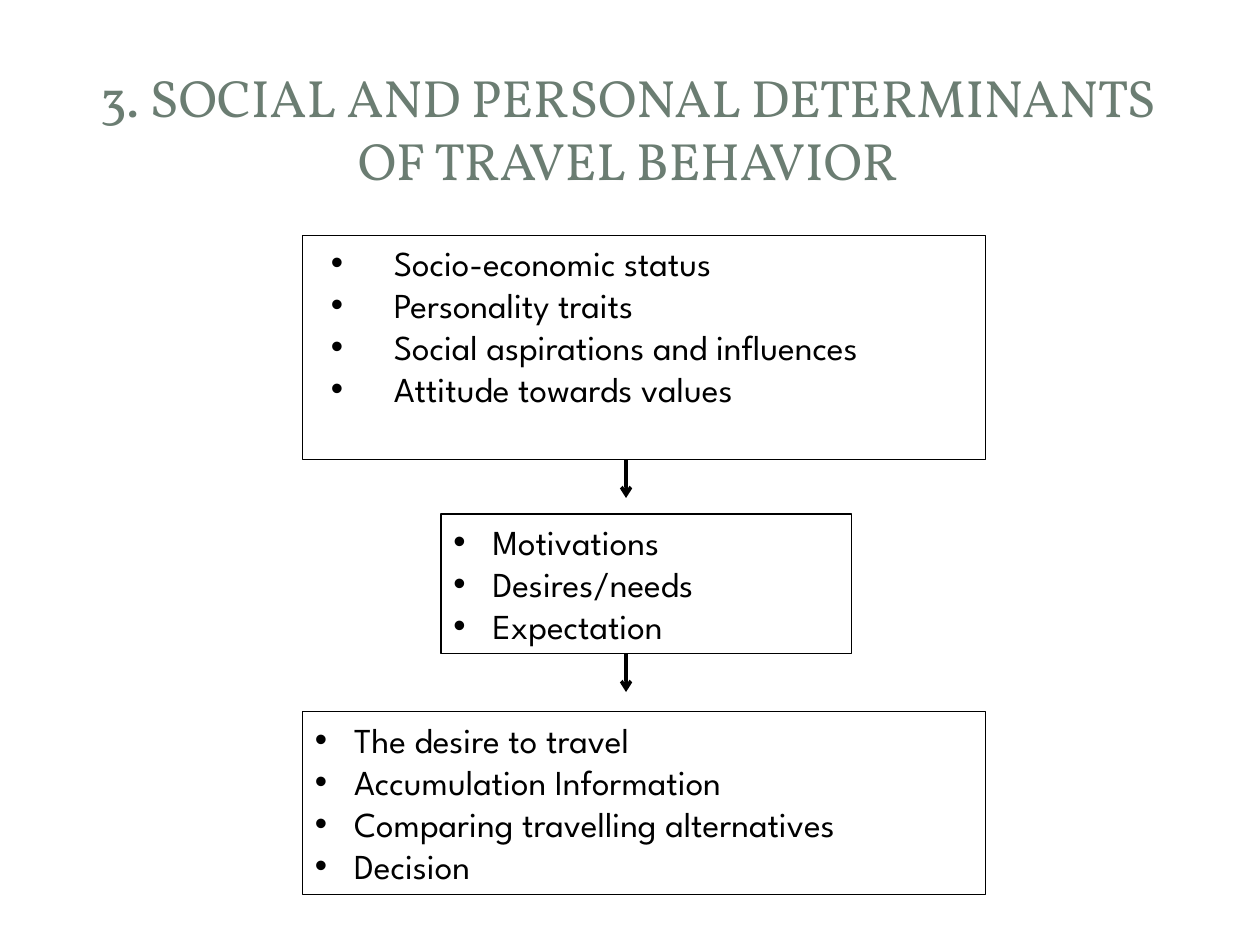
from lxml.etree import SubElement
from pptx import Presentation
from pptx.dml.color import RGBColor
from pptx.enum.shapes import MSO_CONNECTOR as Line, MSO_SHAPE as Shape
from pptx.enum.text import MSO_ANCHOR as Anchor, PP_ALIGN as Align
from pptx.oxml.ns import qn
from pptx.util import Cm, Pt

# Content: each box is (left, top, width, height, indent, hang, items), in cm
TITLE = "3. SOCIAL AND PERSONAL DETERMINANTS OF TRAVEL BEHAVIOR"
BOXES = [
    (6.1, 4.75, 13.77, 4.52, 1.59, 1.27,
     ["Socio-economic status", "Personality traits",
      "Social aspirations and influences", "Attitude towards values"]),
    (8.89, 10.36, 8.28, 2.82, 0.79, 0.79,
     ["Motivations", "Desires/needs", "Expectation"]),
    (6.1, 14.35, 13.77, 3.68, 0.79, 0.79,
     ["The desire to travel", "Accumulation Information",
      "Comparing travelling alternatives", "Decision"]),
]
ARROW_X, ARROW_LEN = 12.62, 0.77

# Formats
HEAD = {"name": "Vollkorn", "size": Pt(30)}
BODY = {"name": "League Spartan", "size": Pt(20)}
GREEN, BLACK = "6B7D72", "000000"


def paint(fmt, color):
    fmt.rgb = RGBColor.from_string(color)


def write(para, text, style, color, align):
    para.alignment = align
    run = para.add_run()
    run.text = text
    for key, value in style.items():
        setattr(run.font, key, value)
    paint(run.font.color, color)


def bullet(para, indent, hang):
    props = para._p.get_or_add_pPr()
    props.set("marL", str(Cm(indent)))
    props.set("indent", str(-Cm(hang)))
    SubElement(props, qn("a:buFont"), typeface="Arial")
    SubElement(props, qn("a:buChar"), char="•")


def add_box(slide, left, top, width, height, indent, hang, items):
    box = slide.shapes.add_shape(
        Shape.RECTANGLE, Cm(left), Cm(top), Cm(width), Cm(height))
    box.shadow.inherit = False
    box.fill.background()
    paint(box.line.color, BLACK)
    box.line.width = Pt(0.75)
    frame = box.text_frame
    frame.word_wrap = True
    frame.vertical_anchor = Anchor.TOP
    for i, item in enumerate(items):
        para = frame.add_paragraph() if i else frame.paragraphs[0]
        write(para, item, BODY, BLACK, Align.LEFT)
        bullet(para, indent, hang)


def add_arrow(slide, top):
    x = Cm(ARROW_X)
    arrow = slide.shapes.add_connector(
        Line.STRAIGHT, x, Cm(top), x, Cm(top + ARROW_LEN))
    paint(arrow.line.color, BLACK)
    arrow.line.width = Pt(2)
    SubElement(arrow.line._get_or_add_ln(), qn("a:tailEnd"), type="arrow")
    SubElement(arrow._element.spPr, qn("a:effectLst"))


def main():
    deck = Presentation()
    deck.slide_width, deck.slide_height = Cm(25.4), Cm(19.05)
    slide = deck.slides.add_slide(deck.slide_layouts[6])

    # Title
    title = slide.shapes.add_textbox(Cm(1.19), Cm(1.14), Cm(22.94), Cm(2.9))
    frame = title.text_frame
    frame.word_wrap = True
    frame.vertical_anchor = Anchor.MIDDLE
    write(frame.paragraphs[0], TITLE, HEAD, GREEN, Align.CENTER)

    # Boxes, then an arrow down from each one but the last
    for box in BOXES:
        add_box(slide, *box)
    for _, top, _, height, *_ in BOXES[:-1]:
        add_arrow(slide, top + height)

    deck.save("out.pptx")


if __name__ == "__main__":
    main()
